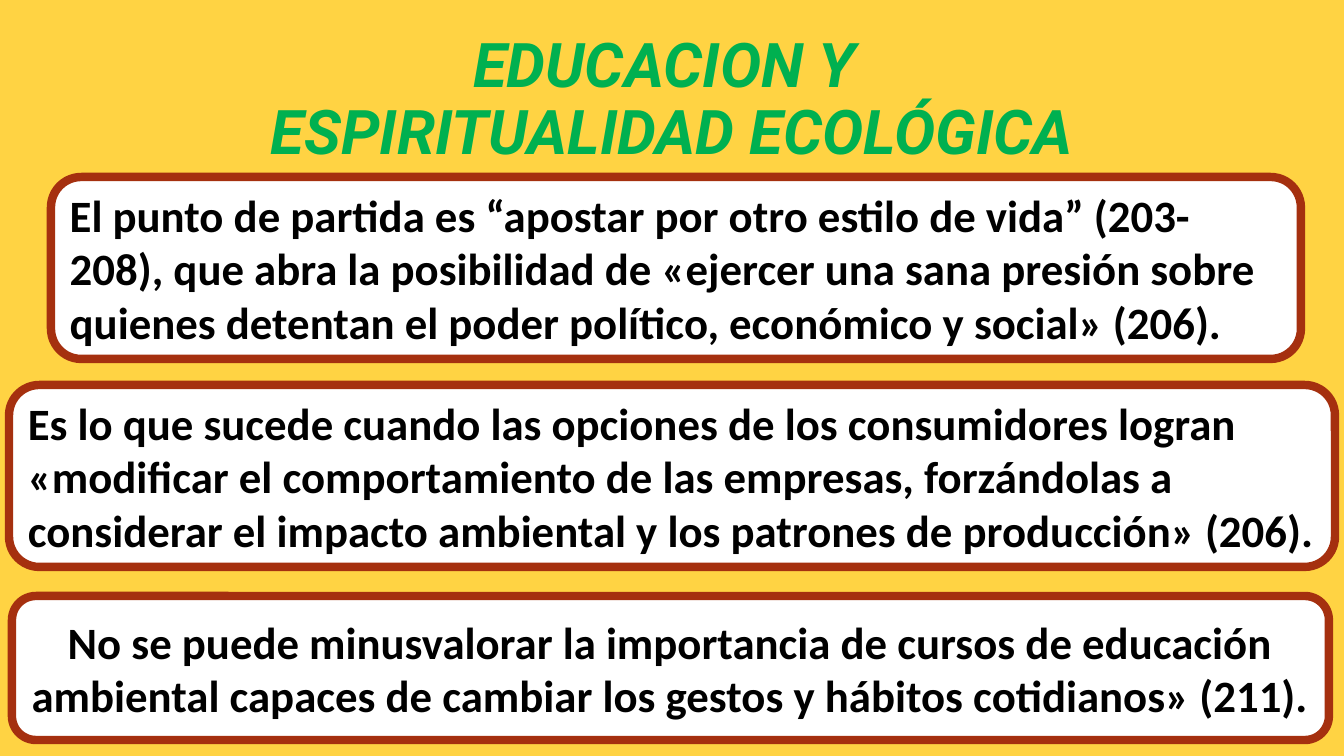
import pptx
import pptx.util
import pptx.dml.color
import pptx.enum.shapes
import pptx.enum.text

ALIGN = pptx.enum.text.PP_ALIGN
COLORS = {"background": "FFD343", "title": "00B050", "card": "FFFFFF",
          "border": "A5300F", "body": "000000"}

TITLE = ["EDUCACION Y ", "ESPIRITUALIDAD ECOLÓGICA"]
TITLE_AREA = (93, 28, 1159, 146)
CARDS = [
    ("El punto de partida es “apostar por otro estilo de vida” (203-208), que abra la "
     "posibilidad de «ejercer una sana presión sobre quienes detentan el poder político, "
     "económico y social» (206).",
     (51, 177, 1250, 182), ALIGN.LEFT),
    ("Es lo que sucede cuando las opciones de los consumidores logran «modificar el "
     "comportamiento de las empresas, forzándolas a considerar el impacto ambiental y los "
     "patrones de producción» (206).",
     (9, 385, 1326, 182), ALIGN.LEFT),
    ("No se puede minusvalorar la importancia de cursos de educación ambiental capaces de "
     "cambiar los gestos y hábitos cotidianos» (211).",
     (12, 596, 1317, 144), ALIGN.CENTER),
]


def px(length):
    return round(length * 914400 / 100.8)


def color(name):
    return pptx.dml.color.RGBColor.from_string(COLORS[name])


def write(shape, lines, font="Calibri", size=32, ink="body", italic=False,
          align=ALIGN.LEFT, spacing=1.0):
    frame = shape.text_frame
    frame.word_wrap = True
    frame.vertical_anchor = pptx.enum.text.MSO_ANCHOR.MIDDLE
    paragraph = frame.paragraphs[0]
    paragraph.alignment = align
    paragraph.line_spacing = spacing
    for index, line in enumerate(lines):
        if index:
            paragraph.add_line_break()
        run = paragraph.add_run()
        run.text = line
        run.font.name = font
        run.font.size = pptx.util.Pt(size)
        run.font.bold = True
        run.font.italic = italic
        run.font.color.rgb = color(ink)


deck = pptx.Presentation()
deck.slide_width, deck.slide_height = px(1344), px(756)
slide = deck.slides.add_slide(deck.slide_layouts[6])
slide.background.fill.solid()
slide.background.fill.fore_color.rgb = color("background")

heading = slide.shapes.add_textbox(*map(px, TITLE_AREA))
write(heading, TITLE, font="Roboto", size=44, ink="title", italic=True,
      align=ALIGN.CENTER, spacing=0.9)

for quote, area, align in CARDS:
    card = slide.shapes.add_shape(
        pptx.enum.shapes.MSO_SHAPE.ROUNDED_RECTANGLE, *map(px, area))
    card.shadow.inherit = False
    card.fill.solid()
    card.fill.fore_color.rgb = color("card")
    card.line.color.rgb = color("border")
    card.line.width = pptx.util.Pt(6)
    write(card, [quote], align=align)

deck.save("out.pptx")
